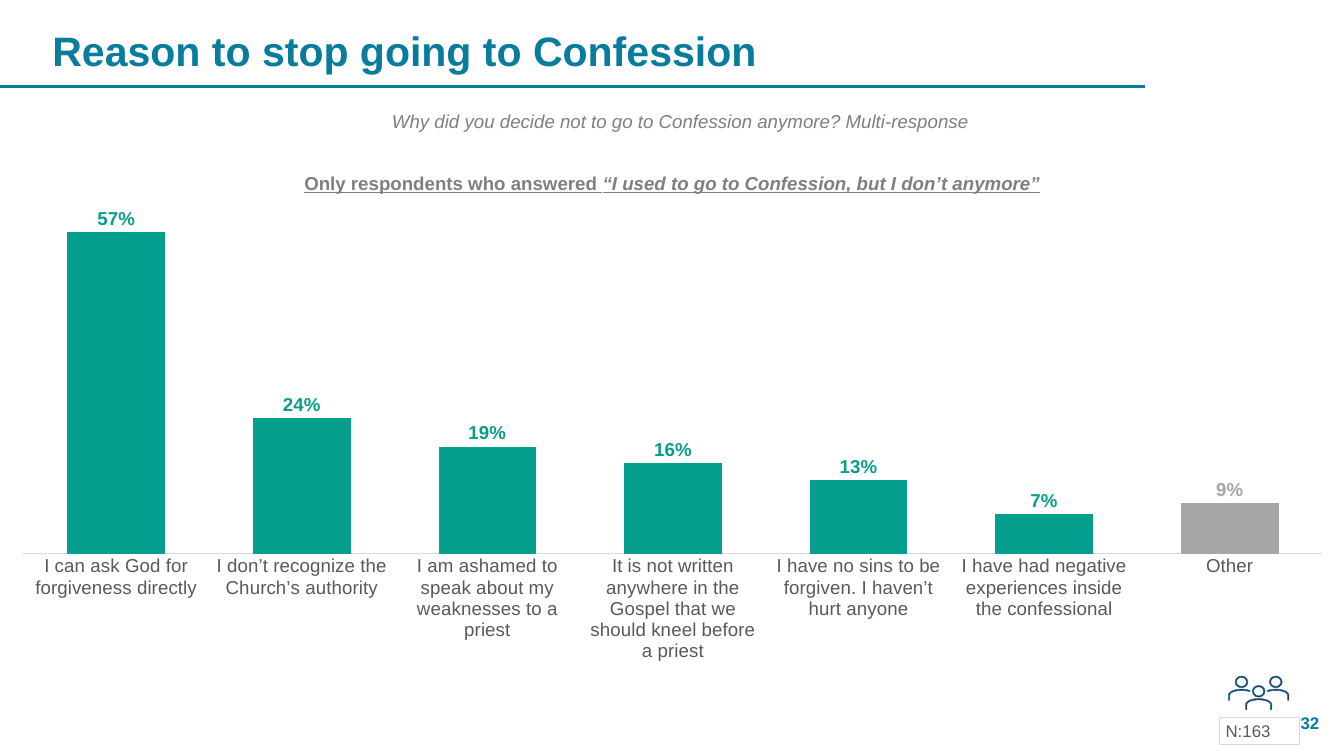
import math
from dataclasses import dataclass
from lxml import etree
from pptx import Presentation
from pptx.chart.data import CategoryChartData
from pptx.dml.color import RGBColor
from pptx.enum import chart as ch, shapes, text
from pptx.oxml.ns import qn
from pptx.util import Inches, Pt


@dataclass(frozen=True)
class Theme:
    font: str = "Arial"
    blue: RGBColor = RGBColor.from_string("077C9C")
    teal: RGBColor = RGBColor.from_string("069E8C")
    plum: RGBColor = RGBColor.from_string("660039")
    white: RGBColor = RGBColor.from_string("FFFFFF")
    rule: RGBColor = RGBColor.from_string("D9D9D9")
    muted: RGBColor = RGBColor.from_string("A6A6A6")
    note: RGBColor = RGBColor.from_string("7F7F7F")
    body: RGBColor = RGBColor.from_string("595959")
    title_size: int = 44
    text_size: int = 20
    small_size: int = 18


t = Theme()
prs = Presentation()
prs.slide_width, prs.slide_height = Inches(20), Inches(11.25)
s = prs.slides.add_slide(prs.slide_layouts[6])
col = prs.slide_width / 200
row = prs.slide_height / 112.5


def grid(x, y, w, h):
    return round(x * col), round(y * row), round(w * col), round(h * row)


def write(sp, runs, size, color, align=text.PP_ALIGN.LEFT):
    tf = sp.text_frame
    tf.word_wrap = True
    tf.vertical_anchor = text.MSO_ANCHOR.MIDDLE
    p = tf.paragraphs[0]
    p.alignment = align
    for words, style in runs:
        r = p.add_run()
        r.text = words
        r.font.name, r.font.size = t.font, Pt(size)
        r.font.color.rgb = color
        r.font.bold = "b" in style
        r.font.italic = "i" in style
        r.font.underline = "u" in style


x, y, w, h = grid(0, 12.9, 170.4, 0)
rule = s.shapes.add_connector(shapes.MSO_CONNECTOR.STRAIGHT, x, y, x + w, y)
rule.line.color.rgb, rule.line.width = t.blue, Pt(3)
etree.SubElement(rule._element.spPr, qn("a:effectLst"))

reasons = [
    ("I can ask God for forgiveness directly", 0.57),
    ("I don’t recognize the Church’s authority", 0.24),
    ("I am ashamed to speak about my weaknesses to a priest", 0.19),
    ("It is not written anywhere in the Gospel that we should kneel before a priest", 0.16),
    ("I have no sins to be forgiven. I haven’t hurt anyone", 0.13),
    ("I have had negative experiences inside the confessional", 0.07),
    ("Other", 0.09),
]
data = CategoryChartData(number_format="0%")
data.categories = [reason for reason, _ in reasons]
data.add_series("Series 1", [share for _, share in reasons])
chart = s.shapes.add_chart(
    ch.XL_CHART_TYPE.COLUMN_CLUSTERED, *grid(2.9, 28.6, 194.1, 79.1), data).chart
chart.has_legend = chart.has_title = False
chart.font.name, chart.font.size = t.font, Pt(t.text_size)

plot_area = chart._chartSpace.chart.plotArea
for old in plot_area.findall(qn("c:layout")):
    plot_area.remove(old)
layout = etree.Element(qn("c:layout"))
manual = etree.SubElement(layout, qn("c:manualLayout"))
for tag, val in [("layoutTarget", "inner"), ("xMode", "edge"), ("yMode", "edge"),
                 ("x", "0.003"), ("y", "0.044"), ("w", "0.996"), ("h", "0.636")]:
    etree.SubElement(manual, qn("c:" + tag)).set("val", val)
plot_area.insert(0, layout)

axis = chart.value_axis
axis.minimum_scale, axis.maximum_scale = 0, 0.6
axis.has_major_gridlines = axis.visible = False
axis = chart.category_axis
axis.major_tick_mark = ch.XL_TICK_MARK.NONE
axis.format.line.color.rgb, axis.format.line.width = t.rule, Pt(0.75)
axis.tick_labels.font.name = t.font
axis.tick_labels.font.size = Pt(t.text_size)
axis.tick_labels.font.color.rgb = t.body

plot = chart.plots[0]
plot.gap_width, plot.vary_by_categories = 90, False
series = plot.series[0]
labels = series.data_labels
labels.show_value = True
labels.number_format, labels.number_format_is_linked = "0%", False
other = series.points[len(reasons) - 1]
for item, label, color in [(series, labels, t.teal), (other, other.data_label, t.muted)]:
    item.format.fill.solid()
    item.format.fill.fore_color.rgb = color
    label.position = ch.XL_LABEL_POSITION.OUTSIDE_END
    label.font.name, label.font.size = t.font, Pt(t.text_size)
    label.font.bold, label.font.color.rgb = True, color

center, right = text.PP_ALIGN.CENTER, text.PP_ALIGN.RIGHT
for box, runs, size, color, align in [
    ((174, 105.5, 23.3, 4), [("32", "b")], t.small_size, t.blue, right),
    ((32.8, 15.8, 136.9, 4.4),
     [("Why did you decide not to go to Confession anymore? Multi-response", "i")],
     t.text_size, t.note, center),
    ((6.8, 4, 151.5, 6.9), [("Reason to stop going to Confession", "b")],
     t.title_size, t.blue, text.PP_ALIGN.LEFT),
    ((30.3, 25, 139.5, 4.4),
     [("Only respondents who answered ", "bu"),
      ("“I used to go to Confession, but I don’t anymore”", "biu")],
     t.text_size, t.note, center),
]:
    write(s.shapes.add_textbox(*grid(*box)), runs, size, color, align)

people = []
for mid, top, first, last in [(184.75, 100.6, 48, 180), (189.85, 100.6, 0, 132),
                              (187.3, 102, 0, 180)]:
    head = s.shapes.add_shape(shapes.MSO_SHAPE.DONUT, *grid(mid - 0.95, top, 1.9, 1.75))
    head.adjustments[0] = 0.11
    edges = []
    for inset in (0, 0.2):
        edge = []
        for a in range(first, last + 1, 6):
            angle = math.radians(a)
            edge.append((mid + (1.95 - inset) * math.cos(angle),
                         top + 2.85 - (0.9 - inset) * math.sin(angle)))
        if first == 0:
            edge.insert(0, (edge[0][0], top + 3.6))
        if last == 180:
            edge.append((edge[-1][0], top + 3.6))
        edges.append(edge)
    outline = [(px * col, py * row) for px, py in edges[0] + edges[1][::-1]]
    fb = s.shapes.build_freeform(*outline[0])
    fb.add_line_segments(outline[1:], close=True)
    people += [head, fb.convert_to_shape()]
badge = s.shapes.add_shape(shapes.MSO_SHAPE.RECTANGLE, *grid(181.4, 106.8, 11.9, 4))
write(badge, [("N:163", "")], t.small_size, t.body)

for sp, fill, line, weight in [(sp, t.plum, t.blue, 0.59) for sp in people] + [
        (badge, t.white, t.rule, 0.5)]:
    sp.shadow.inherit = False
    sp.fill.solid()
    sp.fill.fore_color.rgb = fill
    sp.line.color.rgb, sp.line.width = line, Pt(weight)

prs.save("out.pptx")
